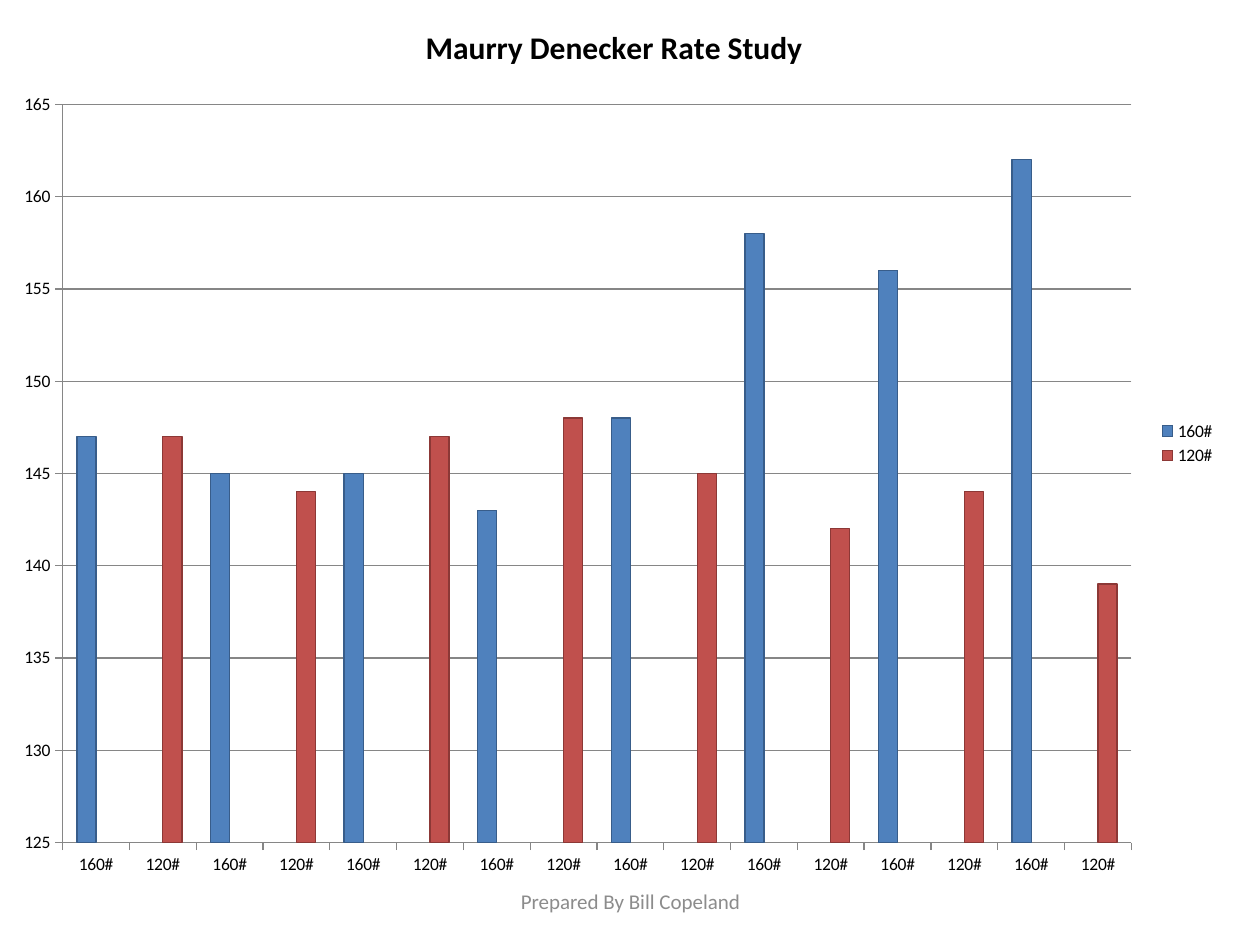
from lxml import etree
from pptx import Presentation
from pptx.chart.data import CategoryChartData
from pptx.dml.color import RGBColor
from pptx.enum.chart import XL_CHART_TYPE as ChartType, XL_LEGEND_POSITION as LegendPos
from pptx.enum.chart import XL_TICK_MARK as Tick
from pptx.enum.text import MSO_ANCHOR as Anchor, PP_ALIGN as Align
from pptx.oxml.ns import qn
from pptx.util import Inches, Pt

COLORS = {
    "text": "000000",
    "footer": "8C8C8C",
    "axis": "868686",
    "160#": "4F81BD",
    "160# edge": "385D8A",
    "120#": "C0504D",
    "120# edge": "8C3836",
}
RATES = {
    "160#": [147, 145, 145, 143, 148, 158, 156, 162],
    "120#": [147, 144, 147, 148, 145, 142, 144, 139],
}
PLOT_AREA = {"x": 0.051, "y": 0.122, "w": 0.87, "h": 0.823}


class SlideBuilder:
    def __init__(self, slide, font="Calibri"):
        self.s = slide
        self.font = font

    def color(self, name):
        return RGBColor.from_string(COLORS[name])

    def style_font(self, font, size, color, bold=False):
        font.name, font.size, font.bold = self.font, Pt(size), bold
        font.color.rgb = self.color(color)

    def style_line(self, line, color):
        line.color.rgb = self.color(color)
        line.width = Pt(0.75)

    def text(self, box, text, size, color):
        tf = self.s.shapes.add_textbox(*map(Inches, box)).text_frame
        tf.word_wrap = True
        tf.vertical_anchor = Anchor.MIDDLE
        p = tf.paragraphs[0]
        p.alignment = Align.CENTER
        r = p.add_run()
        r.text = text
        self.style_font(r.font, size, color)

    def place_plot(self, chart, area):
        """Fix the inner plot area, given as fractions of the chart."""
        plot_area = chart.plots[0]._element.getparent()
        for old in plot_area.findall(qn("c:layout")):
            plot_area.remove(old)
        layout = etree.Element(qn("c:layout"))
        manual = etree.SubElement(layout, qn("c:manualLayout"))
        settings = {"layoutTarget": "inner", "xMode": "edge", "yMode": "edge", **area}
        for tag, value in settings.items():
            etree.SubElement(manual, qn(f"c:{tag}")).set("val", str(value))
        plot_area.insert(0, layout)

    def column_chart(self, box, title, rates):
        """Alternate the series along the axis, one column per category."""
        names = list(rates)
        rounds = len(rates[names[0]])
        data = CategoryChartData()
        data.categories = names * rounds
        for name, values in rates.items():
            data.add_series(name, [v if n == name else None for v in values for n in names])
        frame = self.s.shapes.add_chart(ChartType.COLUMN_CLUSTERED, *map(Inches, box), data)
        chart = frame.chart
        self.style_font(chart.font, 10, "text")

        chart.has_title = True
        r = chart.chart_title.text_frame.paragraphs[0].add_run()
        r.text = title
        self.style_font(r.font, 18, "text", bold=True)
        chart.has_legend = True
        chart.legend.position = LegendPos.RIGHT
        chart.legend.include_in_layout = False

        plot = chart.plots[0]
        plot.gap_width, plot.overlap = 150, 0
        plot.vary_by_categories = False
        for series in plot.series:
            series.format.fill.solid()
            series.format.fill.fore_color.rgb = self.color(series.name)
            self.style_line(series.format.line, f"{series.name} edge")

        for axis in (chart.category_axis, chart.value_axis):
            axis.major_tick_mark, axis.minor_tick_mark = Tick.OUTSIDE, Tick.NONE
            self.style_line(axis.format.line, "axis")
        value_axis = chart.value_axis
        value_axis.minimum_scale, value_axis.maximum_scale = 125, 165
        value_axis.major_unit = 5
        value_axis.has_major_gridlines = True
        self.style_line(value_axis.major_gridlines.format.line, "axis")
        self.place_plot(chart, PLOT_AREA)


def main():
    prs = Presentation()
    prs.slide_width, prs.slide_height = Inches(10), Inches(7.5)
    builder = SlideBuilder(prs.slides.add_slide(prs.slide_layouts[6]))
    builder.text((3.42, 6.95, 3.17, 0.4), "Prepared By Bill Copeland", 12, "footer")
    builder.column_chart((0, -0.04, 9.75, 7.12), "Maurry Denecker Rate Study", RATES)
    prs.save("out.pptx")


if __name__ == "__main__":
    main()
